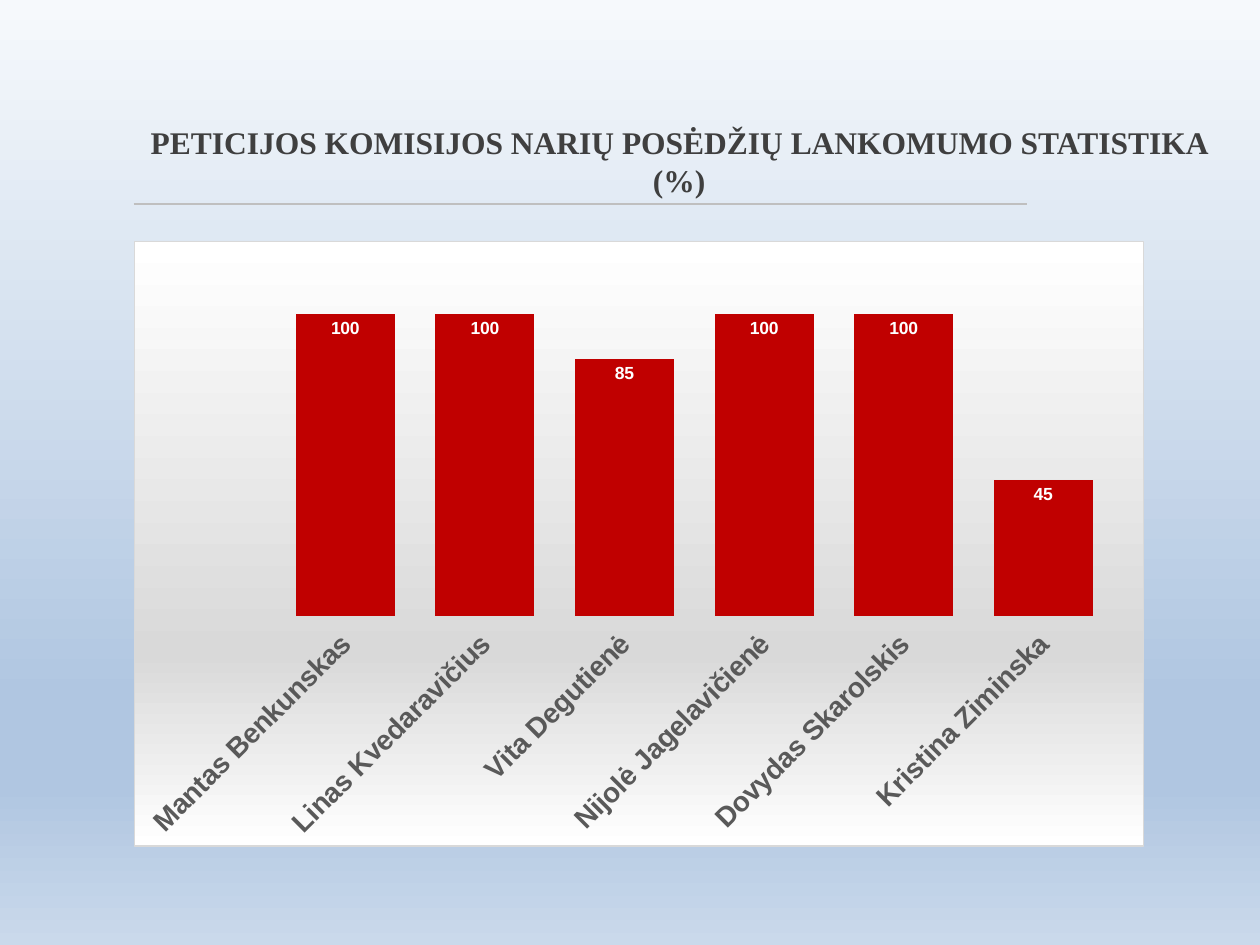
from pptx import Presentation
from pptx.chart.data import CategoryChartData
from pptx.dml.color import RGBColor
from pptx.enum.chart import XL_CHART_TYPE, XL_LABEL_POSITION, XL_TICK_LABEL_POSITION, XL_TICK_MARK
from pptx.enum.shapes import MSO_CONNECTOR
from pptx.enum.text import MSO_ANCHOR, MSO_AUTO_SIZE, PP_ALIGN
from pptx.oxml import parse_xml
from pptx.oxml.ns import nsdecls, qn
from pptx.util import Inches, Pt

COLUMN = XL_CHART_TYPE.COLUMN_CLUSTERED
IN_END = XL_LABEL_POSITION.INSIDE_END
LOW = XL_TICK_LABEL_POSITION.LOW
NO_TICK = XL_TICK_MARK.NONE
STRAIGHT = MSO_CONNECTOR.STRAIGHT
MIDDLE = MSO_ANCHOR.MIDDLE
NO_FIT = MSO_AUTO_SIZE.NONE
CENTER = PP_ALIGN.CENTER

TITLE = "PETICIJOS KOMISIJOS NARIŲ POSĖDŽIŲ LANKOMUMO STATISTIKA (%)"
RATES = [
    ("Mantas Benkunskas", 100),
    ("Linas Kvedaravičius", 100),
    ("Vita Degutienė", 85),
    ("Nijolė Jagelavičienė", 100),
    ("Dovydas Skarolskis", 100),
    ("Kristina Ziminska", 45),
]
THEME = {
    "head": dict(name="Times New Roman", size=18, color="3F3F3F", bold=True),
    "base": dict(name="Arial", size=10, color="000000"),
    "names": dict(name="Arial", size=16, color="595959", bold=True),
    "value": dict(name="Arial", size=10, color="FFFFFF", bold=True),
    "rule": "BFBFBF",
    "bar": "C00000",
    "edge": "D9D9D9",
    "sky": [(0, "F6F9FC"), (74, "B0C6E1"), (83, "B0C6E1"), (100, "CAD9EB")],
    "panel": [(0, "FFFFFF"), (68, "D9D9D9"), (100, "FFFFFF")],
}
LEFT = 1.06
PLOT = {"x": 0.14, "y": 0.12, "w": 0.83, "h": 0.5}


def style(font, name, size, color, bold=False):
    font.name, font.size, font.bold = name, Pt(size), bold
    font.color.rgb = RGBColor.from_string(color)


def write(frame, text, align=CENTER, **look):
    para = frame.paragraphs[0]
    para.alignment = align
    run = para.add_run()
    run.text = text
    style(run.font, **look)


def blend(stops):
    marks = "".join(
        f'<a:gs pos="{pos * 1000}"><a:srgbClr val="{color}"/></a:gs>'
        for pos, color in stops
    )
    return (f'<a:gradFill {nsdecls("a")} rotWithShape="1"><a:gsLst>{marks}</a:gsLst>'
            '<a:lin ang="5400000" scaled="0"/></a:gradFill>')


def paint(slide):
    slide.background.fill.solid()
    back = slide._element.find(".//" + qn("p:bgPr"))
    back.replace(back[0], parse_xml(blend(THEME["sky"])))


def add_title(slide):
    title = slide.shapes.title
    title.left, title.top = Inches(LEFT), Inches(0.65)
    title.width, title.height = Inches(8.66), Inches(1.26)
    frame = title.text_frame
    frame.word_wrap, frame.auto_size = True, NO_FIT
    frame.vertical_anchor = MIDDLE
    write(frame, TITLE, **THEME["head"])


def add_rule(slide):
    rule = slide.shapes.add_connector(
        STRAIGHT, Inches(LEFT), Inches(1.62), Inches(8.15), Inches(1.62))
    rule.line.color.rgb = RGBColor.from_string(THEME["rule"])
    rule.line.width = Pt(1.5)
    rule._element.spPr.append(parse_xml(f'<a:effectLst {nsdecls("a")}/>'))


def frame_chart(chart):
    body = chart._chartSpace.find(qn("c:chart"))
    body.addnext(parse_xml(
        f'<c:spPr {nsdecls("c", "a")}>{blend(THEME["panel"])}'
        f'<a:ln w="{Pt(0.75)}"><a:solidFill><a:srgbClr val="{THEME["edge"]}"/>'
        '</a:solidFill></a:ln></c:spPr>'))
    area = body.find(qn("c:plotArea"))
    for old in area.findall(qn("c:layout")):
        area.remove(old)
    sizes = "".join(f'<c:{key} val="{val}"/>' for key, val in PLOT.items())
    area.insert(0, parse_xml(
        f'<c:layout {nsdecls("c")}><c:manualLayout><c:layoutTarget val="inner"/>'
        f'<c:xMode val="edge"/><c:yMode val="edge"/>{sizes}'
        '</c:manualLayout></c:layout>'))


def add_bars(slide):
    names, rates = zip(*RATES)
    data = CategoryChartData()
    data.categories = names
    data.add_series("Series 1", rates)
    chart = slide.shapes.add_chart(
        COLUMN, Inches(LEFT), Inches(1.91), Inches(8.02), Inches(4.81), data).chart
    chart.has_title = chart.has_legend = False
    style(chart.font, **THEME["base"])

    axis = chart.category_axis
    axis.major_tick_mark = axis.minor_tick_mark = NO_TICK
    axis.tick_label_position = LOW
    axis.format.line.fill.background()
    style(axis.tick_labels.font, **THEME["names"])
    axis._element.find(qn("c:txPr")).find(qn("a:bodyPr")).set("rot", "-2700000")

    scale = chart.value_axis
    scale.minimum_scale, scale.maximum_scale = 0, 100
    scale.has_major_gridlines = False
    scale.visible = False

    plot = chart.plots[0]
    plot.gap_width, plot.vary_by_categories = 41, False
    bars = plot.series[0]
    bars.format.fill.solid()
    bars.format.fill.fore_color.rgb = RGBColor.from_string(THEME["bar"])
    labels = bars.data_labels
    labels.show_value, labels.position = True, IN_END
    style(labels.font, **THEME["value"])
    frame_chart(chart)


def main():
    deck = Presentation()
    deck.slide_width, deck.slide_height = Inches(10), Inches(7.5)
    slide = deck.slides.add_slide(deck.slide_layouts[5])
    paint(slide)
    add_title(slide)
    add_rule(slide)
    add_bars(slide)
    deck.save("out.pptx")


if __name__ == "__main__":
    main()
